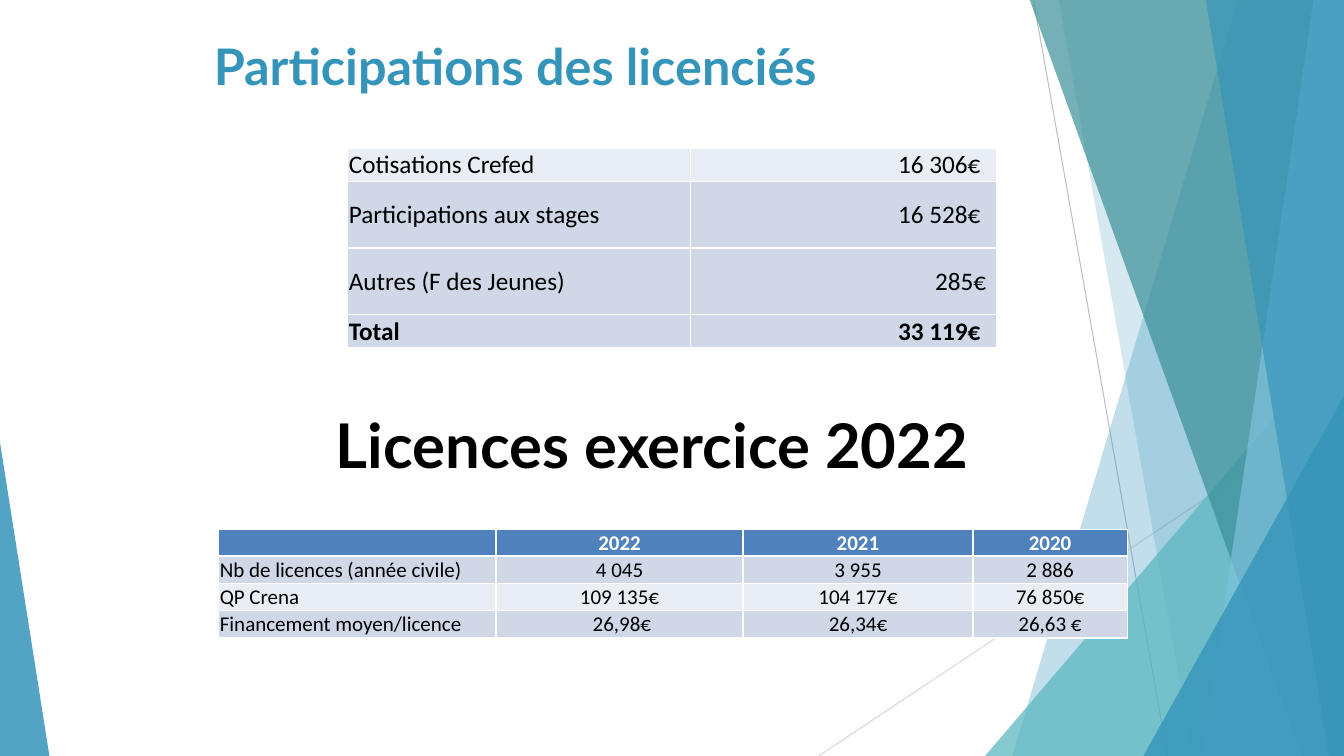
from dataclasses import dataclass

from lxml import etree
from pptx import Presentation
from pptx import util as u
from pptx.dml.color import RGBColor
from pptx.enum import shapes, text
from pptx.oxml.ns import qn

PX = 9144  # EMU per px, 100 px to the inch
WIDTH, HEIGHT = 1333, 750
BLUE, TEAL, WHITE, BLACK = "3494BA", "58B6C0", "FFFFFF", "000000"
HEADER, BAND, PALE = "4F81BD", "D0D8E8", "E9EDF4"
LEFT, CENTER, RIGHT = text.PP_ALIGN.LEFT, text.PP_ALIGN.CENTER, text.PP_ALIGN.RIGHT


@dataclass
class Ray:
    start: tuple[int, int]
    end: tuple[int, int]
    color: str


@dataclass
class Facet:
    """A band with a slanted left side that runs to the right slide edge."""
    top_x: int
    bottom_x: int
    color: str
    opacity: int


@dataclass
class Corner:
    left: int
    top: int
    width: int
    apex: int
    color: str
    opacity: int


@dataclass
class Row:
    cells: list[str]
    height: int
    fill: str
    color: str = BLACK
    bold: bool = False
    top_line: float = 1
    bottom_line: float = 1


@dataclass
class Grid:
    left: int
    top: int
    columns: list[int]
    rows: list[Row]
    size: int
    value_align: text.PP_ALIGN
    value_margin: int


def px(length: int) -> u.Emu:
    return u.Emu(length * PX)


def rgb(color: str) -> RGBColor:
    return RGBColor.from_string(color)


def paint(shape, color: str, opacity: int) -> None:
    shape.shadow.inherit = False
    shape.fill.solid()
    shape.fill.fore_color.rgb = rgb(color)
    tint = shape.element.spPr.find(f"{qn('a:solidFill')}/{qn('a:srgbClr')}")
    etree.SubElement(tint, qn("a:alpha"), val=str(opacity * 1000))
    shape.line.fill.background()


def draw_ray(slide, ray: Ray) -> None:
    line = slide.shapes.add_connector(
        shapes.MSO_CONNECTOR.STRAIGHT, *map(px, ray.start + ray.end))
    line.line.color.rgb = rgb(ray.color)
    line.line.width = u.Pt(0.75)
    etree.SubElement(line.element.spPr, qn("a:effectLst"))


def draw_facet(slide, facet: Facet) -> None:
    outline = slide.shapes.build_freeform(facet.top_x, -1, scale=PX)
    outline.add_line_segments(
        [(WIDTH, -1), (WIDTH, HEIGHT), (facet.bottom_x, HEIGHT)], close=True)
    paint(outline.convert_to_shape(), facet.color, facet.opacity)


def draw_corner(slide, corner: Corner) -> None:
    triangle = slide.shapes.add_shape(
        shapes.MSO_SHAPE.ISOSCELES_TRIANGLE, px(corner.left), px(corner.top),
        px(corner.width), px(HEIGHT - corner.top))
    triangle.adjustments[0] = corner.apex
    paint(triangle, corner.color, corner.opacity)


def write_heading(shape, words: str, size: int, color: str, align: text.PP_ALIGN) -> None:
    frame = shape.text_frame
    frame.text = words
    frame.word_wrap = True
    frame.auto_size = text.MSO_AUTO_SIZE.NONE
    frame.vertical_anchor = text.MSO_ANCHOR.TOP
    paragraph = frame.paragraphs[0]
    paragraph.alignment = align
    font = paragraph.font
    font.name, font.size, font.bold = "Lato", u.Pt(size), True
    font.color.rgb = rgb(color)


def border_cell(cell, row: Row) -> None:
    sides = {"lnL": 1, "lnR": 1, "lnT": row.top_line, "lnB": row.bottom_line}
    properties = cell._tc.get_or_add_tcPr()
    for position, (side, points) in enumerate(sides.items()):
        edge = etree.Element(qn(f"a:{side}"), w=str(u.Pt(points)))
        fill = etree.SubElement(edge, qn("a:solidFill"))
        etree.SubElement(fill, qn("a:srgbClr"), val=WHITE)
        properties.insert(position, edge)


def draw_grid(slide, grid: Grid) -> None:
    table = slide.shapes.add_table(
        len(grid.rows), len(grid.columns), px(grid.left), px(grid.top),
        px(sum(grid.columns)), px(sum(row.height for row in grid.rows))).table
    table.first_row = table.horz_banding = False
    for column, width in zip(table.columns, grid.columns):
        column.width = px(width)
    for r, row in enumerate(grid.rows):
        table.rows[r].height = px(row.height)
        for c, words in enumerate(row.cells):
            cell = table.cell(r, c)
            cell.text = words
            cell.vertical_anchor = text.MSO_ANCHOR.MIDDLE
            cell.margin_left = cell.margin_top = px(1)
            cell.margin_right = px(grid.value_margin if c else 1)
            cell.margin_bottom = 0
            cell.fill.solid()
            cell.fill.fore_color.rgb = rgb(row.fill)
            border_cell(cell, row)
            paragraph = cell.text_frame.paragraphs[0]
            paragraph.alignment = grid.value_align if c else LEFT
            font = paragraph.font
            font.name, font.size, font.bold = "Calibri", u.Pt(grid.size), row.bold
            font.color.rgb = rgb(row.color)


RAYS = [Ray((1025, 0), (1158, HEIGHT), "BFBFBF"),
        Ray((WIDTH, 403), (812, HEIGHT), "D9D9D9")]
BACK_FACETS = [Facet(1228, 1004, BLUE, 30), Facet(1050, 1183, BLUE, 20)]
FRONT_FACETS = [Facet(1021, 1291, "3A8F98", 70), Facet(1303, 1192, "7FC1DB", 70),
                Facet(1196, 1318, BLUE, 65)]
BACK_CORNER = Corner(977, 333, 356, 1, TEAL, 72)
FRONT_CORNERS = [Corner(1134, 393, 199, 1, BLUE, 80), Corner(0, 439, 49, 0, BLUE, 85)]

CONTRIBUTIONS = Grid(345, 147, [340, 303], [
    Row(["Cotisations Crefed", "16 306€ "], 33, PALE),
    Row(["Participations aux stages", "16 528€ "], 66, BAND),
    Row(["Autres (F des Jeunes)", "285€"], 66, BAND),
    Row(["Total", "33 119€ "], 33, BAND, bold=True),
], 18, RIGHT, 10)
LICENCES = Grid(217, 525, [275, 245, 228, 153], [
    Row(["", "2022", "2021", "2020"], 27, HEADER, WHITE, True, bottom_line=1.5),
    Row(["Nb de licences (année civile)", "4 045", "3 955", "2 886"], 27, BAND, top_line=1.5),
    Row(["QP Crena", "109 135€", "104 177€", "76 850€"], 27, PALE),
    Row(["Financement moyen/licence", " 26,98€", "26,34€", "26,63 €"], 27, BAND),
], 15, CENTER, 1)


def main() -> None:
    deck = Presentation()
    deck.slide_width, deck.slide_height = px(WIDTH), px(HEIGHT)
    slide = deck.slides.add_slide(deck.slide_layouts[5])

    # Faceted backdrop
    for ray in RAYS:
        draw_ray(slide, ray)
    for facet in BACK_FACETS:
        draw_facet(slide, facet)
    draw_corner(slide, BACK_CORNER)
    for facet in FRONT_FACETS:
        draw_facet(slide, facet)
    for corner in FRONT_CORNERS:
        draw_corner(slide, corner)

    # Headings, with the title raised above the backdrop
    title = slide.shapes.title
    title.left, title.top, title.width, title.height = map(px, (202, 30, 898, 101))
    write_heading(title, "Participations des licenciés", 36, BLUE, LEFT)
    title.element.getparent().append(title.element)
    licences_heading = slide.shapes.add_textbox(*map(px, (202, 399, 898, 84)))
    write_heading(licences_heading, "Licences exercice 2022", 44, BLACK, CENTER)
    licences_heading.text_frame.margin_right = px(18)

    # Tables
    for grid in (CONTRIBUTIONS, LICENCES):
        draw_grid(slide, grid)

    deck.save("out.pptx")


if __name__ == "__main__":
    main()
